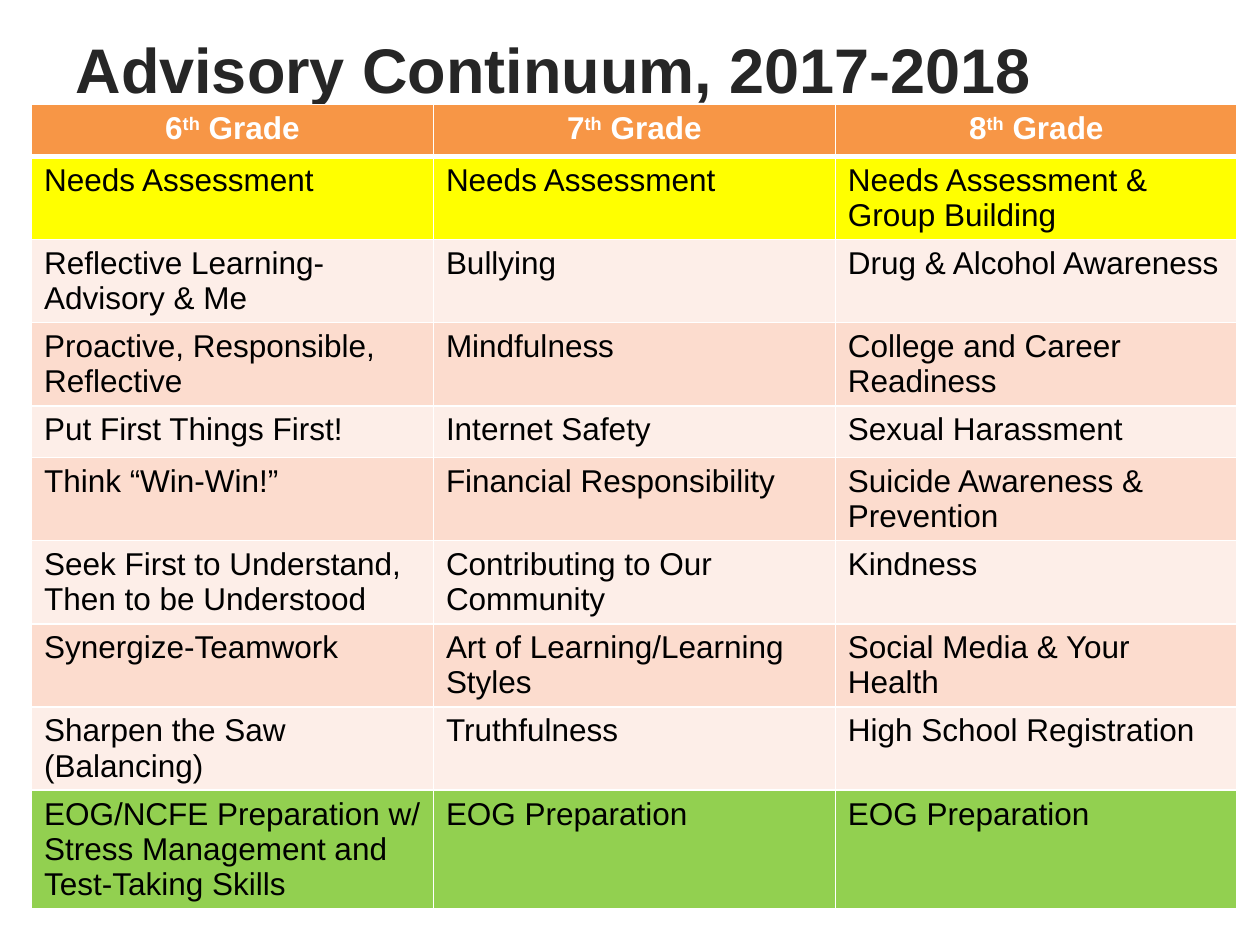
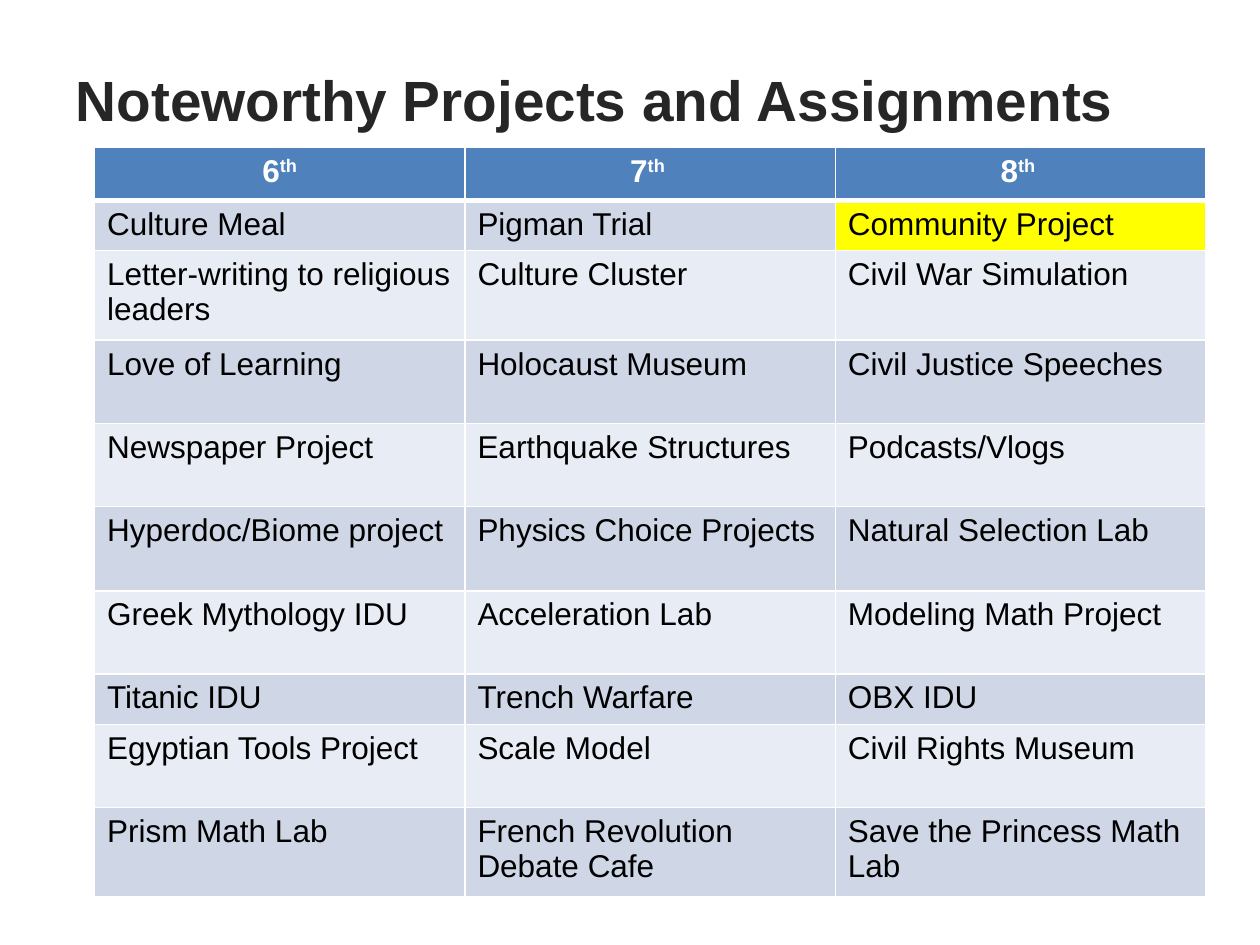
from dataclasses import dataclass

from lxml.etree import SubElement
from pptx import Presentation
from pptx.dml.color import RGBColor
from pptx.enum.text import MSO_ANCHOR, MSO_AUTO_SIZE, PP_ALIGN
from pptx.oxml.ns import qn
from pptx.util import Inches, Pt


@dataclass(frozen=True)
class Theme:
    font: str = "Arial"
    title_color: str = "262626"
    body_color: str = "000000"
    white: str = "FFFFFF"
    yellow: str = "FFFF00"
    green: str = "92D050"
    orange: tuple = ("F79646", "FCDCCE", "FDEEE8")
    blue: tuple = ("4F81BD", "CFD7E7", "E8ECF4")
    cell_size: float = 18
    continuum_title_size: float = 36
    projects_title_size: float = 32.4
    border: float = 1
    header_border: float = 3


THEME = Theme()
TITLE_ONLY = 5

CONTINUUM_HEADERS = [("6", "th", " Grade"), ("7", "th", " Grade"), ("8", "th", " Grade")]
CONTINUUM_ROWS = [
    ("Needs Assessment", "Needs Assessment", "Needs Assessment & Group Building"),
    ("Reflective Learning- Advisory & Me", "Bullying", "Drug & Alcohol Awareness"),
    ("Proactive, Responsible, Reflective", "Mindfulness", "College and Career Readiness"),
    ("Put First Things First!", "Internet Safety", "Sexual Harassment"),
    ("Think “Win-Win!”", "Financial Responsibility", "Suicide Awareness & Prevention"),
    ("Seek First to Understand, Then to be Understood", "Contributing to Our Community", "Kindness"),
    ("Synergize-Teamwork", "Art of Learning/Learning Styles", "Social Media & Your Health"),
    ("Sharpen the Saw (Balancing)", "Truthfulness", "High School Registration"),
    ("EOG/NCFE Preparation w/ Stress Management and Test-Taking Skills",
     "EOG Preparation", "EOG Preparation"),
]

PROJECT_HEADERS = [("6", "th"), ("7", "th "), ("8", "th ")]
PROJECT_ROWS = [
    ("Culture Meal", "Pigman Trial", "Community Project"),
    ("Letter-writing to religious leaders", "Culture Cluster", "Civil War Simulation"),
    ("Love of Learning", "Holocaust Museum", "Civil Justice Speeches"),
    ("Newspaper Project", "Earthquake Structures", "Podcasts/Vlogs"),
    ("Hyperdoc/Biome project", "Physics Choice Projects", "Natural Selection Lab"),
    ("Greek Mythology IDU", "Acceleration Lab", "Modeling Math Project"),
    ("Titanic IDU", "Trench Warfare", "OBX IDU"),
    ("Egyptian Tools Project", "Scale Model", "Civil Rights Museum"),
    ("Prism Math Lab", "French Revolution Debate Cafe", "Save the Princess Math Lab"),
]
PROJECT_HEIGHTS = [0.42, 0.4, 0.71, 0.66, 0.66, 0.67, 0.66, 0.4, 0.66, 0.71]


def style_font(font, size, color, bold):
    font.name = THEME.font
    font.size = Pt(size)
    font.bold = bold
    font.color.rgb = RGBColor.from_string(color)


def add_title(slide, text, top, size):
    title = slide.shapes.title
    title.left, title.top = Inches(0.5), Inches(top)
    title.width, title.height = Inches(9), Inches(1.25)
    frame = title.text_frame
    frame.text = text
    frame.word_wrap = True
    frame.auto_size = MSO_AUTO_SIZE.NONE
    frame.vertical_anchor = MSO_ANCHOR.MIDDLE
    paragraph = frame.paragraphs[0]
    paragraph.alignment = PP_ALIGN.LEFT
    style_font(paragraph.runs[0].font, size, THEME.title_color, True)


def add_borders(cell, top, bottom):
    widths = {"lnL": THEME.border, "lnR": THEME.border, "lnT": top, "lnB": bottom}
    properties = cell._tc.get_or_add_tcPr()
    for tag, width in widths.items():
        line = SubElement(properties, qn(f"a:{tag}"), w=str(Pt(width)))
        fill = SubElement(line, qn("a:solidFill"))
        SubElement(fill, qn("a:srgbClr"), val=THEME.white)


def fill_cell(cell, color):
    cell.fill.solid()
    cell.fill.fore_color.rgb = RGBColor.from_string(color)


def write_header(cell, parts):
    paragraph = cell.text_frame.paragraphs[0]
    paragraph.alignment = PP_ALIGN.CENTER
    for index, text in enumerate(parts):
        run = paragraph.add_run()
        run.text = text
        style_font(run.font, THEME.cell_size, THEME.white, True)
        if index == 1:
            run.font._element.set("baseline", "30000")


def write_body(cell, text):
    cell.text_frame.text = text
    font = cell.text_frame.paragraphs[0].runs[0].font
    style_font(font, THEME.cell_size, THEME.body_color, False)


def add_grade_table(slide, left, top, column_width, row_heights, headers, rows, header_color, bands):
    frame = slide.shapes.add_table(
        len(row_heights), len(headers), Inches(left), Inches(top),
        Inches(column_width * len(headers)), Inches(sum(row_heights)))
    table = frame.table
    for column in table.columns:
        column.width = Inches(column_width)
    for row, height in zip(table.rows, row_heights):
        row.height = Inches(height)
    for row_index, texts in enumerate([headers, *rows]):
        is_header = row_index == 0
        top_border = THEME.header_border if row_index == 1 else THEME.border
        bottom_border = THEME.header_border if is_header else THEME.border
        color = header_color if is_header else bands[(row_index - 1) % 2]
        write = write_header if is_header else write_body
        for column_index, text in enumerate(texts):
            cell = table.cell(row_index, column_index)
            add_borders(cell, top_border, bottom_border)
            fill_cell(cell, color)
            write(cell, text)
    return table


def build_continuum(slide):
    add_title(slide, "Advisory Continuum, 2017-2018", -0.08, THEME.continuum_title_size)
    header_color, *bands = THEME.orange
    heights = [0.41] * (len(CONTINUUM_ROWS) + 1)
    table = add_grade_table(slide, 0.25, 0.83, 3.19, heights,
                            CONTINUUM_HEADERS, CONTINUUM_ROWS, header_color, bands)
    for row_index, color in ((1, THEME.yellow), (len(CONTINUUM_ROWS), THEME.green)):
        for cell in table.rows[row_index].cells:
            fill_cell(cell, color)


def build_projects(slide):
    add_title(slide, "Noteworthy Projects and Assignments", 0.16, THEME.projects_title_size)
    header_color, *bands = THEME.blue
    table = add_grade_table(slide, 0.75, 1.17, 2.94, PROJECT_HEIGHTS,
                            PROJECT_HEADERS, PROJECT_ROWS, header_color, bands)
    fill_cell(table.cell(1, 2), THEME.yellow)


def main():
    presentation = Presentation()
    presentation.slide_width, presentation.slide_height = Inches(10), Inches(7.5)
    for build in (build_continuum, build_projects):
        build(presentation.slides.add_slide(presentation.slide_layouts[TITLE_ONLY]))
    presentation.save("out.pptx")


if __name__ == "__main__":
    main()
